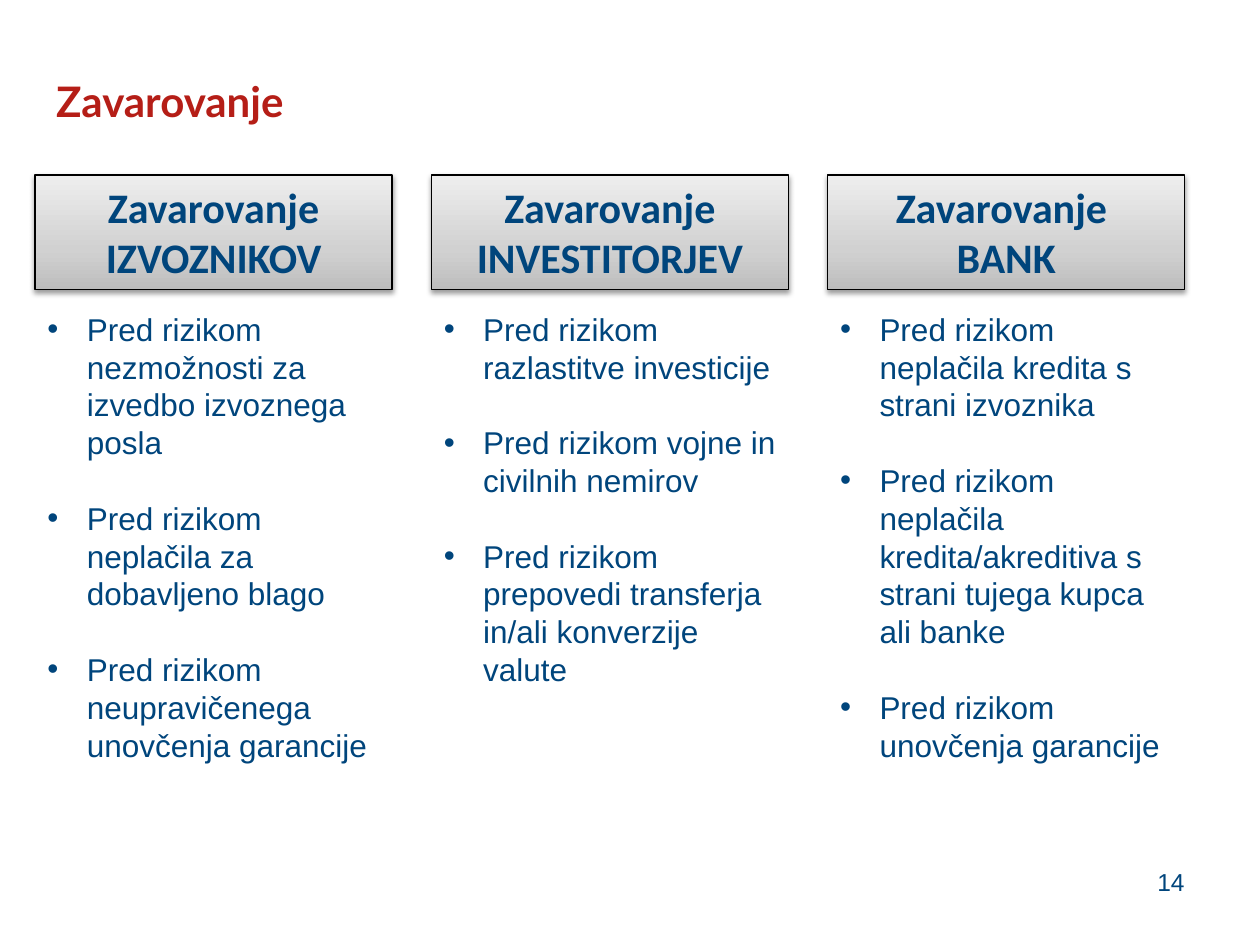
from copy import deepcopy

from lxml.etree import SubElement
from pptx import Presentation
from pptx.dml.color import RGBColor
from pptx.enum.shapes import MSO_SHAPE
from pptx.enum.text import MSO_ANCHOR, PP_ALIGN
from pptx.oxml.ns import qn
from pptx.util import Pt

COLORS = {
    "navy": "00457C",
    "red": "B51E17",
    "black": "000000",
    "dark_gray": "BDBDBD",
    "gray": "D1D1D1",
    "light_gray": "EEEEEE",
}
GRADIENT = [(0, "dark_gray"), (0.35, "gray"), (1, "light_gray")]

COLUMN_LEFT, COLUMN_PITCH, COLUMN_WIDTH = 20, 226.5, 204
LINE_HEIGHT = 21.6
COLUMNS = [
    (["Zavarovanje IZVOZNIKOV"], [
        "Pred rizikom nezmožnosti za izvedbo izvoznega posla",
        "Pred rizikom neplačila za dobavljeno blago",
        "Pred rizikom neupravičenega unovčenja garancije",
    ]),
    (["Zavarovanje INVESTITORJEV"], [
        "Pred rizikom razlastitve investicije",
        "Pred rizikom vojne in civilnih nemirov",
        "Pred rizikom prepovedi transferja in/ali konverzije valute",
    ]),
    (["Zavarovanje ", "BANK"], [
        "Pred rizikom neplačila kredita s strani izvoznika",
        "Pred rizikom neplačila kredita/akreditiva s strani tujega kupca ali banke",
        "Pred rizikom unovčenja garancije",
    ]),
]


def rgb(name):
    return RGBColor.from_string(COLORS[name])


def add_bullet(para, indent=22.5):
    properties = para._p.get_or_add_pPr()
    properties.set("marL", str(Pt(indent)))
    properties.set("indent", str(-Pt(indent)))
    SubElement(properties, qn("a:buFont"), typeface="Arial")
    SubElement(properties, qn("a:buChar"), char="•")


def write(box, texts, font="Arial", size=18, color="navy", bold=False,
          align=PP_ALIGN.LEFT, anchor=MSO_ANCHOR.TOP, bullet=False,
          line_height=None, gap=0):
    """Fill a shape with one paragraph per text; gap separates them."""
    frame = box.text_frame
    frame.word_wrap = True
    frame.vertical_anchor = anchor
    for index, text in enumerate(texts):
        para = frame.add_paragraph() if index else frame.paragraphs[0]
        if bullet:
            add_bullet(para)
        para.alignment = align
        if line_height:
            para.line_spacing = Pt(line_height)
        if index and gap:
            para.space_before = Pt(gap)
        span = para.add_run()
        span.text = text
        span.font.name = font
        span.font.size = Pt(size)
        span.font.bold = bold
        span.font.color.rgb = rgb(color)


class SlideBuilder:
    """Hold the current page and the look of its elements."""

    def __init__(self, page):
        self.page = page

    def text(self, left, top, width, height, texts, **style):
        box = self.page.shapes.add_textbox(Pt(left), Pt(top), Pt(width), Pt(height))
        write(box, texts, **style)

    def header(self, left, top, width, height, texts):
        box = self.page.shapes.add_shape(
            MSO_SHAPE.RECTANGLE, Pt(left), Pt(top), Pt(width), Pt(height))
        self.paint_gradient(box)
        box.line.color.rgb = rgb("black")
        box.line.width = Pt(0.75)
        self.cast_shadow(box)
        write(box, texts, font="Calibri", size=24, bold=True, align=PP_ALIGN.CENTER)

    def bullets(self, left, top, width, height, texts):
        self.text(left, top, width, height, texts, bullet=True,
                  line_height=LINE_HEIGHT, gap=LINE_HEIGHT)

    def paint_gradient(self, box):
        box.fill.gradient()
        box.fill.gradient_angle = 90
        first_stop = box._element.spPr.find(".//" + qn("a:gs"))
        first_stop.addnext(deepcopy(first_stop))
        for stop, (position, color) in zip(box.fill.gradient_stops, GRADIENT):
            stop.position = position
            stop.color.rgb = rgb(color)

    def cast_shadow(self, box):
        box.shadow.inherit = False
        effects = box._element.spPr.find(qn("a:effectLst"))
        shadow = SubElement(effects, qn("a:outerShdw"), blurRad=str(Pt(3.1)),
                            dist=str(Pt(1.6)), dir="5400000", rotWithShape="0")
        color = SubElement(shadow, qn("a:srgbClr"), val=COLORS["black"])
        SubElement(color, qn("a:alpha"), val="38000")


def main():
    deck = Presentation()
    deck.slide_width, deck.slide_height = Pt(720), Pt(540)
    builder = SlideBuilder(deck.slides.add_slide(deck.slide_layouts[6]))

    builder.text(25, 26, 505, 62.5, ["Zavarovanje"], font="Lato", size=24,
                 color="red", bold=True, anchor=MSO_ANCHOR.MIDDLE)
    for index, (heading, risks) in enumerate(COLUMNS):
        left = COLUMN_LEFT + index * COLUMN_PITCH
        builder.header(left, 100, COLUMN_WIDTH, 65.5, heading)
        builder.bullets(left, 173.5, COLUMN_WIDTH, 269, risks)
    builder.text(516, 492, 168, 37.5, ["14"], size=14, align=PP_ALIGN.RIGHT)

    deck.save("out.pptx")


if __name__ == "__main__":
    main()
